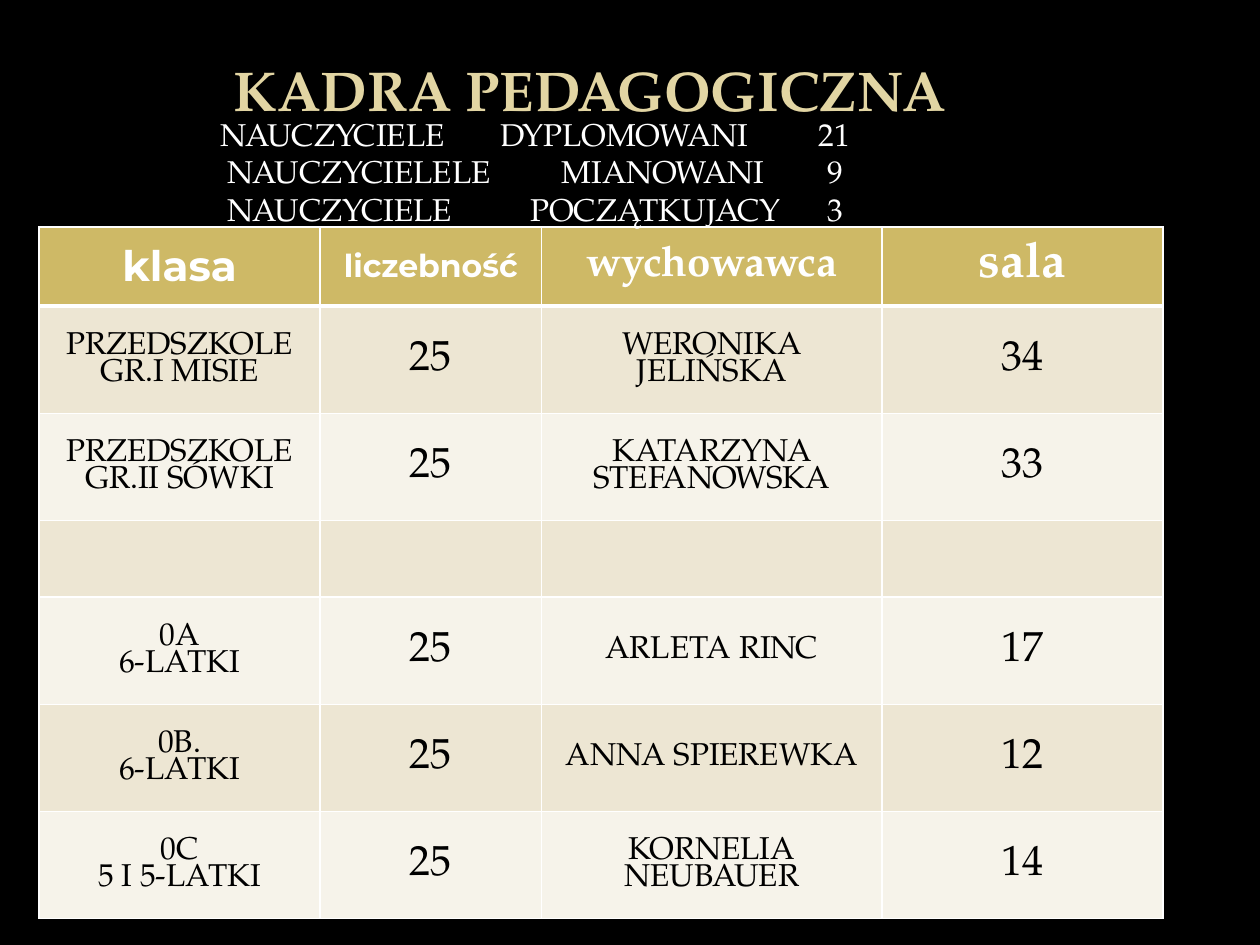
from lxml import etree
from pptx import Presentation
from pptx.dml.color import RGBColor
from pptx.enum import text as t
from pptx.oxml import ns
from pptx.util import Inches, Pt

BLACK = RGBColor(0x00, 0x00, 0x00)
WHITE = RGBColor(0xFF, 0xFF, 0xFF)
SAND = RGBColor(0xE2, 0xD5, 0xA3)
GOLD = RGBColor(0xCE, 0xB9, 0x66)
BANDS = [RGBColor(0xED, 0xE6, 0xD3), RGBColor(0xF6, 0xF3, 0xEA)]
SERIF = "TeX Gyre Pagella"
SANS = "Montserrat"


def write(par, words, size, color, font=SERIF, bold=False):
    run = par.add_run()
    run.text = words
    run.font.size = Pt(size)
    run.font.name = font
    run.font.bold = bold
    run.font.color.rgb = color


def edge(cell, side, width):
    line = etree.SubElement(cell._tc.get_or_add_tcPr(), ns.qn("a:" + side),
                            w=str(Pt(width)))
    fill = etree.SubElement(line, ns.qn("a:solidFill"))
    etree.SubElement(fill, ns.qn("a:srgbClr"), val=str(WHITE))


prs = Presentation()
prs.slide_width, prs.slide_height = Inches(10), Inches(7.5)
slide = prs.slides.add_slide(prs.slide_layouts[5])
slide.background.fill.solid()
slide.background.fill.fore_color.rgb = BLACK

# Title
title = slide.shapes.title
title.left, title.top = Inches(0.78), Inches(0.39)
title.width, title.height = Inches(7.81), Inches(0.64)
title.text_frame.vertical_anchor = t.MSO_ANCHOR.TOP
par = title.text_frame.paragraphs[0]
par.alignment = t.PP_ALIGN.CENTER
write(par, "KADRA PEDAGOGICZNA", 32, SAND, bold=True)

# Class table
COLS = [2.23, 1.76, 2.7, 2.23]
ROWS = [0.63, 0.85, 0.85, 0.61, 0.85, 0.85, 0.85]
HEAD = [("klasa", 24, SANS), ("liczebność", 18, SANS),
        ("wychowawca", 24, SERIF), ("sala", 28, SERIF)]
BODY = [
    ("PRZEDSZKOLE\nGR.I MISIE", "25", "WERONIKA JELIŃSKA", "34"),
    ("PRZEDSZKOLE\nGR.II SÓWKI", "25", "KATARZYNA STEFANOWSKA", "33"),
    ("", "", "", ""),
    ("0A\n6-LATKI", "25", "ARLETA RINC", "17"),
    ("0B.\n6-LATKI", "25", "ANNA SPIEREWKA", "12"),
    ("0C\n5 I 5-LATKI", "25", "KORNELIA NEUBAUER", "14"),
]
SIZES = [18, 24, 18, 24]
table = slide.shapes.add_table(len(ROWS), len(COLS), Inches(0.31), Inches(1.8),
                               Inches(sum(COLS)), Inches(sum(ROWS))).table
for col, width in zip(table.columns, COLS):
    col.width = Inches(width)
for row, height in zip(table.rows, ROWS):
    row.height = Inches(height)

for r in range(len(ROWS)):
    for c in range(len(COLS)):
        cell = table.cell(r, c)
        cell.vertical_anchor = t.MSO_ANCHOR.MIDDLE
        edge(cell, "lnL", 1)
        edge(cell, "lnR", 1)
        edge(cell, "lnT", 3 if r == 1 else 1)
        edge(cell, "lnB", 3 if r == 0 else 1)
        cell.fill.solid()
        cell.fill.fore_color.rgb = BANDS[(r - 1) % 2] if r else GOLD
        frame = cell.text_frame
        if r == 0:
            words, size, font = HEAD[c]
            par = frame.paragraphs[0]
            par.alignment = t.PP_ALIGN.CENTER
            write(par, words, size, WHITE, font, True)
        elif BODY[r - 1][c]:
            for i, words in enumerate(BODY[r - 1][c].split("\n")):
                par = frame.add_paragraph() if i else frame.paragraphs[0]
                par.alignment = t.PP_ALIGN.CENTER
                par.line_spacing = 0.85
                write(par, words, SIZES[c], BLACK)

# Teacher counts, set out on tab stops
STAFF = [
    (("NAUCZYCIELE", "DYPLOMOWANI", "21"), (1.1, 3.32, 5.85)),
    (("NAUCZYCIELELE", "MIANOWANI", "9"), (1.16, 3.81, 5.92)),
    (("NAUCZYCIELE", "POCZĄTKUJACY", "3"), (1.16, 3.56, 5.92)),
]
box = slide.shapes.add_textbox(Inches(0.55), Inches(0.86),
                               Inches(7.42), Inches(1.31))
frame = box.text_frame
frame.word_wrap = True
for i, (words, stops) in enumerate(STAFF):
    par = frame.add_paragraph() if i else frame.paragraphs[0]
    tabs = etree.SubElement(par._p.get_or_add_pPr(), ns.qn("a:tabLst"))
    for stop in stops:
        etree.SubElement(tabs, ns.qn("a:tab"), pos=str(Inches(stop)), algn="l")
    for word in words:
        write(par, "\t" + word, 18, WHITE)

prs.save("out.pptx")
